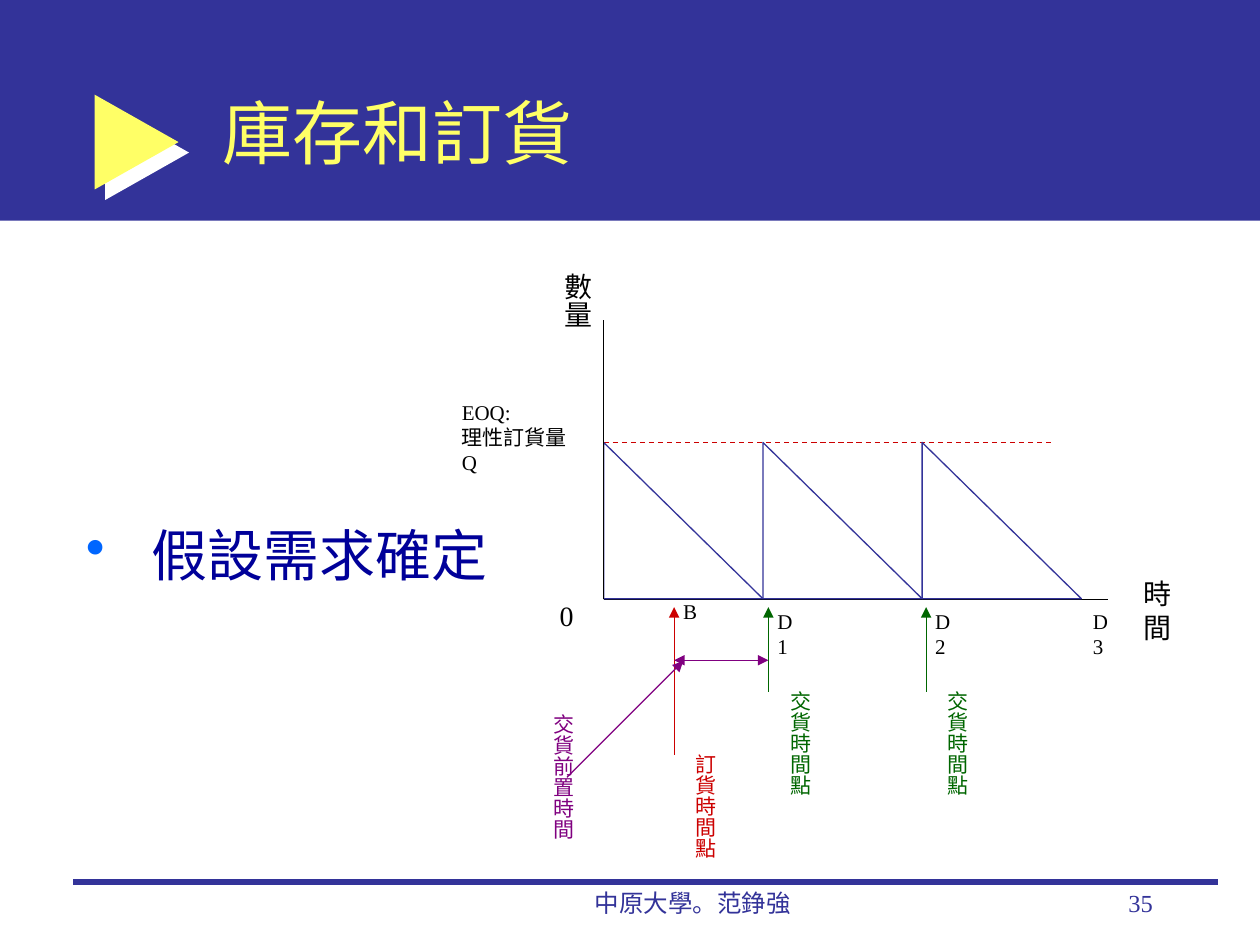
from lxml import etree
from pptx import Presentation
from pptx.dml.color import RGBColor
from pptx.enum.dml import MSO_LINE
from pptx.enum.shapes import MSO_CONNECTOR, MSO_SHAPE
from pptx.enum.text import MSO_ANCHOR, PP_ALIGN
from pptx.oxml.ns import qn
from pptx.util import Cm, Pt

COLORS = {
    "navy": "333399", "yellow": "FFFF66", "white": "FFFFFF", "black": "000000",
    "body": "000099", "bullet": "0066FF", "red": "CC0000", "green": "006600",
    "purple": "800080",
}
SERIF = "Times New Roman"

deck = Presentation()
deck.slide_width, deck.slide_height = Cm(25.4), Cm(19.05)
page = deck.slides.add_slide(deck.slide_layouts[6])


def rgb(name):
    return RGBColor.from_string(COLORS[name])


def add_text(left, top, width, height, lines, size, color, font=SERIF,
             align=PP_ALIGN.LEFT, inset=True, wrap=True, vertical=False):
    box = page.shapes.add_textbox(Cm(left), Cm(top), Cm(width), Cm(height))
    frame = box.text_frame
    frame.word_wrap = wrap
    if not inset:
        frame.margin_left = frame.margin_right = Cm(0)
        frame.margin_top = frame.margin_bottom = Cm(0)
    if vertical:
        frame._txBody.bodyPr.set("vert", "eaVert")
    for number, line in enumerate(lines):
        para = frame.add_paragraph() if number else frame.paragraphs[0]
        para.alignment = align
        span = para.add_run()
        span.text = line
        span.font.name, span.font.size = font, Pt(size)
        span.font.color.rgb = rgb(color)
    return frame


def add_line(x1, y1, x2, y2, color, width=0.75, ends=()):
    line = page.shapes.add_connector(
        MSO_CONNECTOR.STRAIGHT, Cm(x1), Cm(y1), Cm(x2), Cm(y2))
    line.line.color.rgb = rgb(color)
    line.line.width = Pt(width)
    for end in ends:
        etree.SubElement(line.line._ln, qn(f"a:{end}"), type="triangle")
    etree.SubElement(line._element.spPr, qn("a:effectLst"))
    return line


# Title band
band = page.shapes.add_shape(MSO_SHAPE.RECTANGLE, Cm(0), Cm(0), Cm(25.4), Cm(4.45))
band.shadow.inherit = False
band.fill.solid()
band.fill.fore_color.rgb = rgb("navy")
band.line.fill.background()

# Yellow pointer with a hard white shadow
pointer = page.shapes.add_shape(
    MSO_SHAPE.RIGHT_ARROW, Cm(1.91), Cm(1.91), Cm(1.69), Cm(1.91))
pointer.adjustments[0], pointer.adjustments[1] = 0.38, 1
pointer.fill.solid()
pointer.fill.fore_color.rgb = rgb("yellow")
pointer.line.fill.background()
pointer.shadow.inherit = False
effects = pointer._element.spPr.find(qn("a:effectLst"))
shadow = etree.SubElement(effects, qn("a:outerShdw"), blurRad="0",
                          dist=str(Pt(8.5)), dir="2700000", algn="ctr", rotWithShape="0")
etree.SubElement(shadow, qn("a:srgbClr"), val=COLORS["white"])

title = add_text(4.24, 1.07, 19.25, 3.17, ["庫存和訂貨"], 40, "yellow",
                 font="Noto Sans CJK SC")
title.vertical_anchor = MSO_ANCHOR.MIDDLE

# Footer
add_line(1.48, 17.78, 24.55, 17.78, "navy", 3)
add_text(9.95, 17.78, 8.04, 1.27, ["中原大學。范錚強"], 14, "navy", align=PP_ALIGN.CENTER)
add_text(18.2, 17.78, 5.29, 1.27, ["35"], 14, "navy", align=PP_ALIGN.RIGHT)

# Bullet
body = add_text(1.48, 10.37, 8.68, 3.81, ["假設需求確定"], 32, "body")
props = body.paragraphs[0]._p.get_or_add_pPr()
props.set("marL", str(Cm(1.32)))
props.set("indent", str(-Cm(1.32)))
bullet_color = etree.SubElement(props, qn("a:buClr"))
etree.SubElement(bullet_color, qn("a:srgbClr"), val=COLORS["bullet"])
etree.SubElement(props, qn("a:buChar"), char="•")

# Chart axes and order quantity level
origin_x, axis_y, level_y = 12.17, 12.07, 8.92
add_line(origin_x, 12.09, 22.33, 12.09, "black")
level = add_line(origin_x, level_y, 21.18, level_y, "red")
level.line.dash_style = MSO_LINE.DASH
add_text(11.3, 5.51, 0.69, 1.12, ["數量"], 16, "black",
         inset=False, wrap=False, vertical=True)
add_text(23.06, 11.63, 1.12, 0.69, ["時間"], 16, "black", inset=False, wrap=False)
add_text(11.28, 12.07, 0.28, 0.69, ["0"], 16, "black", inset=False, wrap=False)
add_text(9.31, 8.05, 2.41, 1.02, ["EOQ:", "理性訂貨量Q"], 12, "black", inset=False)

# Inventory cycles
cycle = 3.21
for number in range(3):
    stock = page.shapes.add_shape(
        MSO_SHAPE.RIGHT_TRIANGLE, Cm(origin_x + number * cycle), Cm(level_y),
        Cm(cycle), Cm(axis_y - level_y))
    stock.shadow.inherit = False
    stock.fill.background()
    stock.line.color.rgb = rgb("navy")
    stock.line.width = Pt(0.75)
add_line(origin_x, axis_y, origin_x, 6.45, "black")

# Order and delivery moments: arrow up to the axis, vertical label beside its foot
order_x, delivery_x, delivery_gap = 13.59, 15.49, 3.18
moments = [
    (delivery_x, 13.94, "交貨時間點", "green"),
    (delivery_x + delivery_gap, 13.94, "交貨時間點", "green"),
    (order_x, 15.21, "訂貨時間點", "red"),
]
for x, foot, label, color in moments:
    add_line(x, 12.24, x, foot, color, ends=["headEnd"])
    add_text(x + 0.38, foot, 0.51, 2.12, [label], 12, color,
             inset=False, wrap=False, vertical=True)

# Lead time
add_line(order_x, 13.31, delivery_x, 13.31, "purple", ends=["headEnd", "tailEnd"])
add_line(11.43, 15.67, 13.77, 13.33, "purple", ends=["tailEnd"])
add_text(11.1, 14.4, 0.51, 2.54, ["交貨前置時間"], 12, "purple",
         inset=False, wrap=False, vertical=True)

# Axis labels
for number in range(3):
    add_text(15.67 + number * delivery_gap, 12.27, 0.5, 0.51, [f"D{number + 1}"],
             12, "black", inset=False)
add_text(13.77, 12.07, 0.28, 0.51, ["B"], 12, "black", inset=False, wrap=False)

deck.save("out.pptx")
